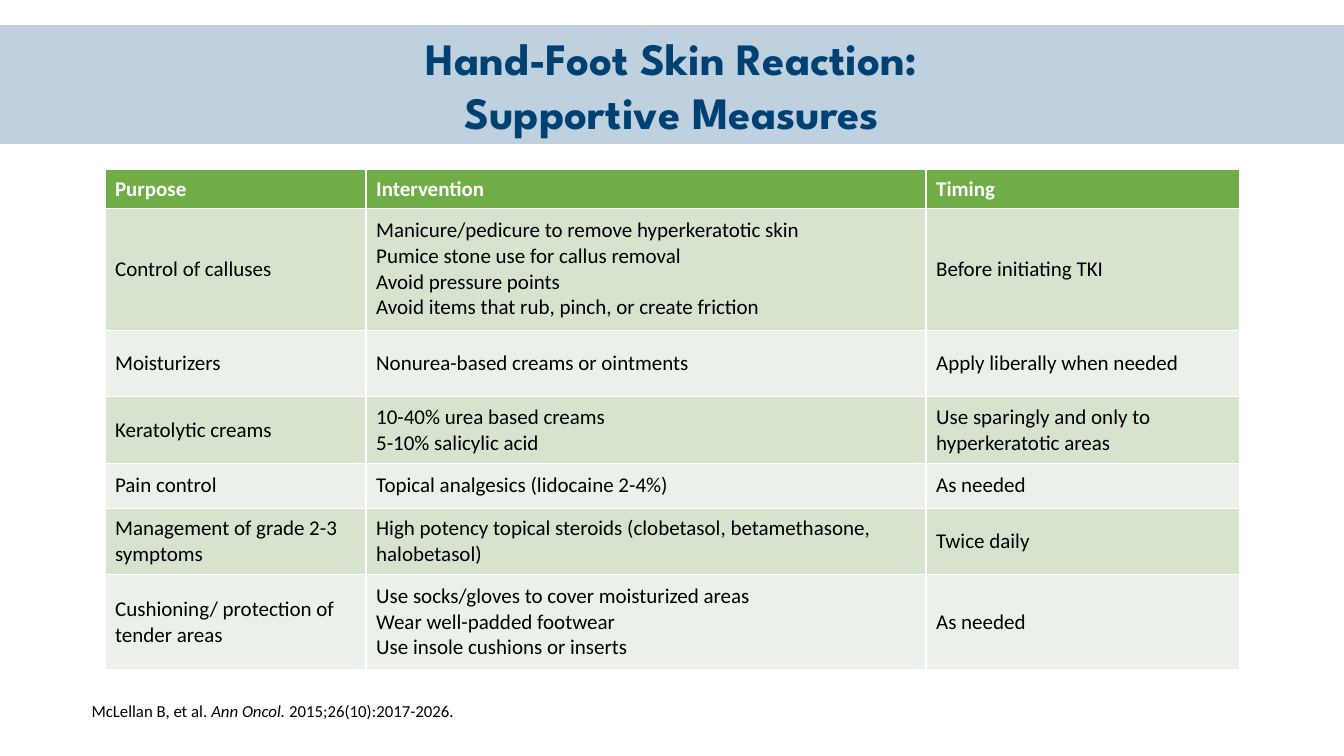
from lxml import etree
from pptx import Presentation
from pptx.dml.color import RGBColor
from pptx.enum.shapes import MSO_SHAPE
from pptx.enum.text import MSO_ANCHOR, MSO_AUTO_SIZE, PP_ALIGN
from pptx.oxml.ns import qn
from pptx.util import Pt

RECTANGLE = MSO_SHAPE.RECTANGLE
MIDDLE = MSO_ANCHOR.MIDDLE
CENTER = PP_ALIGN.CENTER
NO_AUTOFIT = MSO_AUTO_SIZE.NONE
TITLE_ONLY = 5

SLIDE_WIDTH, SLIDE_HEIGHT = 960, 540
HEADER_FILL = "70AD47"
BAND_FILLS = ["D5E3CF", "EBF1E9"]

COLUMN_WIDTHS = [186.5, 400, 224]
ROW_HEIGHTS = [27.8, 87, 47.6, 47.6, 32, 47.6, 67.5]
MEASURES = [
    ("Purpose", "Intervention", "Timing"),
    ("Control of calluses",
     "Manicure/pedicure to remove hyperkeratotic skin\n"
     "Pumice stone use for callus removal\n"
     "Avoid pressure points\n"
     "Avoid items that rub, pinch, or create friction",
     "Before initiating TKI"),
    ("Moisturizers", "Nonurea-based creams or ointments",
     "Apply liberally when needed"),
    ("Keratolytic creams",
     "10-40% urea based creams\n5-10% salicylic acid",
     "Use sparingly and only to hyperkeratotic areas"),
    ("Pain control", "Topical analgesics (lidocaine 2-4%)", "As needed"),
    ("Management of grade 2-3 symptoms",
     "High potency topical steroids (clobetasol, betamethasone, halobetasol)",
     "Twice daily"),
    ("Cushioning/ protection of tender areas",
     "Use socks/gloves to cover moisturized areas\n"
     "Wear well-padded footwear\n"
     "Use insole cushions or inserts",
     "As needed"),
]
CITATION = [("McLellan B, et al. ", False), ("Ann Oncol. ", True),
            ("2015;26(10):2017-2026.", False)]


def color(hex_string):
    return RGBColor.from_string(hex_string)


def set_font(paragraph, name, size, hex_string, bold=False):
    font = paragraph.font
    font.name, font.size, font.bold = name, Pt(size), bold
    font.color.rgb = color(hex_string)


def add_title_band(slide, left, top, width, height):
    # Translucent band, placed behind the title
    band = slide.shapes.add_shape(RECTANGLE, Pt(left), Pt(top), Pt(width), Pt(height))
    band.shadow.inherit = False
    band.line.fill.background()
    band.fill.solid()
    band.fill.fore_color.rgb = color("00497F")
    fill_color = band.element.spPr.find(qn("a:solidFill"))[0]
    etree.SubElement(fill_color, qn("a:alpha")).set("val", "25000")

    # Title, inset equally from both sides of the band
    title = slide.shapes.title
    title.element.addprevious(band.element)
    inset = 123
    title.left, title.top = Pt(left + inset), Pt(top)
    title.width, title.height = Pt(width - 2 * inset), Pt(height)
    frame = title.text_frame
    frame.text = "Hand-Foot Skin Reaction:\nSupportive Measures"
    frame.auto_size = NO_AUTOFIT
    frame.vertical_anchor = MIDDLE
    for paragraph in frame.paragraphs:
        paragraph.alignment = CENTER
        set_font(paragraph, "League Spartan", 32, "004174", bold=True)


def add_measures_table(slide, left, top):
    table = slide.shapes.add_table(
        len(MEASURES), len(COLUMN_WIDTHS), Pt(left), Pt(top),
        Pt(sum(COLUMN_WIDTHS)), Pt(sum(ROW_HEIGHTS))).table
    for column, width in zip(table.columns, COLUMN_WIDTHS):
        column.width = Pt(width)
    for index, (row, height, texts) in enumerate(zip(table.rows, ROW_HEIGHTS, MEASURES)):
        row.height = Pt(height)
        is_header = index == 0
        fill = HEADER_FILL if is_header else BAND_FILLS[(index - 1) % 2]
        for cell, text in zip(row.cells, texts):
            cell.text = text
            cell.vertical_anchor = MIDDLE
            cell.fill.solid()
            cell.fill.fore_color.rgb = color(fill)
            for paragraph in cell.text_frame.paragraphs:
                set_font(paragraph, "Calibri", 15,
                         "FFFFFF" if is_header else "000000", bold=is_header)


def add_citation(slide, left, top, width, height):
    box = slide.shapes.add_textbox(Pt(left), Pt(top), Pt(width), Pt(height))
    box.text_frame.word_wrap = False
    paragraph = box.text_frame.paragraphs[0]
    set_font(paragraph, "Calibri", 12, "000000")
    for text, italic in CITATION:
        run = paragraph.add_run()
        run.text = text
        run.font.italic = italic


def main():
    presentation = Presentation()
    presentation.slide_width = Pt(SLIDE_WIDTH)
    presentation.slide_height = Pt(SLIDE_HEIGHT)
    slide = presentation.slides.add_slide(presentation.slide_layouts[TITLE_ONLY])
    add_title_band(slide, 0, 18, SLIDE_WIDTH, 84.8)
    add_measures_table(slide, 75, 121)
    add_citation(slide, 58.3, 497, 276.5, 21.6)
    presentation.save("out.pptx")


if __name__ == "__main__":
    main()
